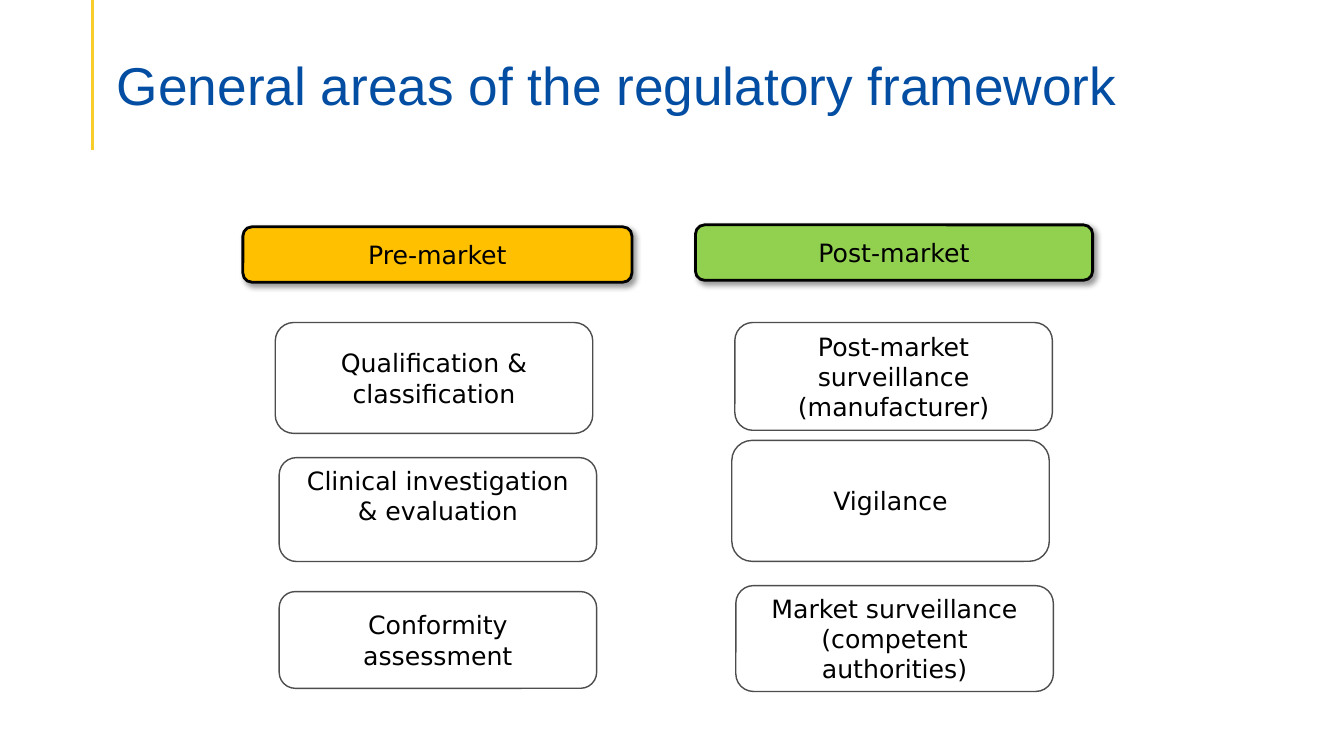
"""Build the slide on the general areas of the regulatory framework."""
import pptx
import pptx.dml.color
import pptx.enum.shapes
import pptx.enum.text
import pptx.oxml
import pptx.oxml.ns
import pptx.util

Pt = pptx.util.Pt
ALIGN = pptx.enum.text.PP_ALIGN
ANCHOR = pptx.enum.text.MSO_ANCHOR

TITLE = "General areas of the regulatory framework"
TITLE_BOX = (76.3, 15.1, 868.3, 92.2)
RULE_LEFT, RULE_HEIGHT = 66.2, 107.3
HEADER_HEIGHT, AREA_WIDTH = 39.6, 226.8
HEADERS = [
    ("Pre-market", 173.5, 162, 277.9, "FFC000"),
    ("Post-market", 496.8, 160.6, 283.7, "92D050"),
]
AREAS = [
    ("Qualification &\nclassification", 196.6, 230.4, 79.2, ANCHOR.MIDDLE),
    ("Clinical investigation & evaluation", 199.4, 326.9, 74.2, ANCHOR.TOP),
    ("Conformity assessment", 199.4, 422.6, 69.1, ANCHOR.MIDDLE),
    ("Post-market surveillance (manufacturer)", 524.9, 230.4, 77, ANCHOR.MIDDLE),
    ("Vigilance", 522.7, 314.6, 86.4, ANCHOR.MIDDLE),
    ("Market surveillance\n(competent authorities)", 525.6, 418.3, 75.6, ANCHOR.MIDDLE),
]


def color(hex_value):
    return pptx.dml.color.RGBColor.from_string(hex_value)


def write_text(shape, text, size=18, font="DejaVu Sans", ink="000000",
               align=ALIGN.CENTER, anchor=ANCHOR.MIDDLE, line_spacing=None):
    frame = shape.text_frame
    frame.text = text
    frame.word_wrap = True
    frame.auto_size = pptx.enum.text.MSO_AUTO_SIZE.NONE
    frame.vertical_anchor = anchor
    for paragraph in frame.paragraphs:
        paragraph.alignment = align
        paragraph.line_spacing = line_spacing
        paragraph.font.size = Pt(size)
        paragraph.font.name = font
        paragraph.font.color.rgb = color(ink)


def add_effects(shape, content=""):
    namespace = pptx.oxml.ns.nsdecls("a")
    shape._element.spPr.append(
        pptx.oxml.parse_xml(f"<a:effectLst {namespace}>{content}</a:effectLst>"))


def add_box(slide, left, top, width, height, fill, line, line_width):
    shape = slide.shapes.add_shape(
        pptx.enum.shapes.MSO_SHAPE.ROUNDED_RECTANGLE,
        Pt(left), Pt(top), Pt(width), Pt(height))
    shape.fill.solid()
    shape.fill.fore_color.rgb = color(fill)
    shape.line.color.rgb = color(line)
    shape.line.width = Pt(line_width)
    return shape


def add_title(slide):
    rule = slide.shapes.add_connector(
        pptx.enum.shapes.MSO_CONNECTOR.STRAIGHT,
        Pt(RULE_LEFT), Pt(0), Pt(RULE_LEFT), Pt(RULE_HEIGHT))
    rule.line.color.rgb = color("F8CC29")
    rule.line.width = Pt(2.25)
    add_effects(rule)
    title = slide.shapes.title
    title.left, title.top, title.width, title.height = map(Pt, TITLE_BOX)
    write_text(title, TITLE, size=38, font="Arial", ink="034EA2",
               align=ALIGN.LEFT, line_spacing=0.9)
    title.text_frame.margin_bottom = Pt(0)


def main():
    presentation = pptx.Presentation()
    presentation.slide_width, presentation.slide_height = Pt(960), Pt(540)
    slide = presentation.slides.add_slide(presentation.slide_layouts[5])
    add_title(slide)
    for text, left, top, width, fill in HEADERS:
        header = add_box(slide, left, top, width, HEADER_HEIGHT, fill, "000000", 2)
        add_effects(header, (
            f'<a:outerShdw blurRad="{Pt(4)}" dist="{Pt(3)}" dir="2700000" algn="tl" '
            'rotWithShape="0"><a:srgbClr val="000000"><a:alpha val="40000"/>'
            '</a:srgbClr></a:outerShdw>'))
        write_text(header, text)
    for text, left, top, height, anchor in AREAS:
        area = add_box(slide, left, top, AREA_WIDTH, height, "FFFFFF", "4D4D4D", 1)
        area.shadow.inherit = False
        write_text(area, text, anchor=anchor)
        if anchor == ANCHOR.TOP:
            area.text_frame.margin_top = Pt(2)
    presentation.save("out.pptx")


if __name__ == "__main__":
    main()
